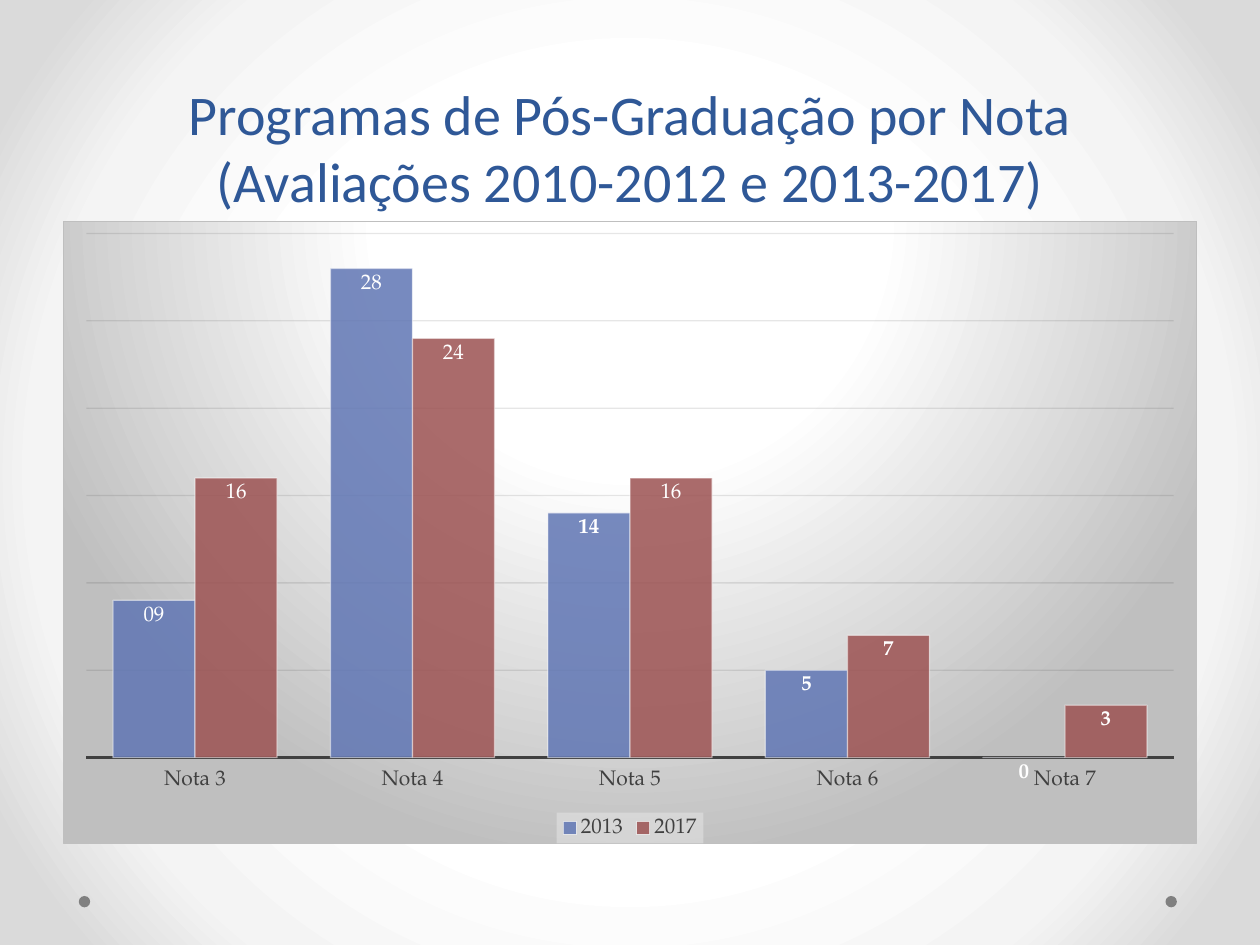
from dataclasses import dataclass

from lxml.etree import fromstring
from pptx import Presentation
from pptx.chart.data import CategoryChartData as Data
from pptx.dml.color import RGBColor as RGB
from pptx.enum.chart import XL_CHART_TYPE as Kind, XL_LABEL_POSITION as Spot
from pptx.enum.chart import XL_LEGEND_POSITION as Side, XL_TICK_LABEL_POSITION as Label
from pptx.enum.chart import XL_TICK_MARK as Tick
from pptx.enum.shapes import MSO_SHAPE as Shape
from pptx.enum.text import MSO_ANCHOR as Anchor, MSO_AUTO_SIZE as Fit, PP_ALIGN as Align
from pptx.util import Pt

DRAW = "http://schemas.openxmlformats.org/drawingml/2006/main"
CHART = "http://schemas.openxmlformats.org/drawingml/2006/chart"


@dataclass(frozen=True)
class Theme:
    title: str = "2F5897"
    text: str = "404040"
    black: str = "000000"
    white: str = "FFFFFF"
    grid: str = "0D0D0D"
    frame: str = "BFBFBF"
    key: str = "F2F2F2"
    dot: str = "808080"
    head: str = "Calibri"
    body: str = "TeX Gyre Pagella"
    big: float = 32
    mid: float = 12
    small: float = 10
    thin: float = 0.75
    thick: float = 1.5


@dataclass(frozen=True)
class Bars:
    name: str
    vals: tuple[int, ...]
    color: str
    plain: tuple[str, ...]


THEME = Theme()
NOTES = [f"Nota {n}" for n in range(3, 8)]
SETS = [
    Bars("2013", (9, 28, 14, 5, 0), "6076B4", ("09", "28")),
    Bars("2017", (16, 24, 16, 7, 3), "9C5252", ("16", "24", "16")),
]


def glow(stops: list[tuple[int, str]], box: tuple[int, int, int, int]) -> str:
    marks = "".join(f'<a:gs pos="{p * 1000}"><a:srgbClr val="{c}"/></a:gs>' for p, c in stops)
    sides = " ".join(f'{s}="{v * 1000}"' for s, v in zip("ltrb", box))
    return (f'<a:gradFill xmlns:a="{DRAW}" rotWithShape="1"><a:gsLst>{marks}</a:gsLst>'
            f'<a:path path="circle"><a:fillToRect {sides}/></a:path></a:gradFill>')


def props(fill: str, line: str = "") -> object:
    return fromstring(f'<c:spPr xmlns:c="{CHART}" xmlns:a="{DRAW}">{fill}{line}</c:spPr>')


def fade(part, alpha: int) -> None:
    for color in part.iter(f"{{{DRAW}}}srgbClr"):
        color.append(fromstring(f'<a:alpha xmlns:a="{DRAW}" val="{alpha * 1000}"/>'))


def style(font, face: str, size: float, color: str, bold: bool = False) -> None:
    font.name, font.size, font.bold = face, Pt(size), bold
    font.color.rgb = RGB.from_string(color)


def stroke(line, color: str, width: float) -> None:
    line.color.rgb = RGB.from_string(color)
    line.width = Pt(width)


def paint_back(slide) -> None:
    fill = slide.background.fill
    fill.solid()
    old = next(slide.element.iter(f"{{{DRAW}}}solidFill"))
    stops = [(50, "FFFFFF"), (76, "F4F4F4"), (92, "DADADA")]
    old.getparent().replace(old, fromstring(glow(stops, (50, 50, 50, 50))))


def add_dot(slide, left: float) -> None:
    dot = slide.shapes.add_shape(Shape.OVAL, Pt(left), Pt(512), Pt(6.5), Pt(6.5))
    dot.shadow.inherit = False
    dot.fill.solid()
    dot.fill.fore_color.rgb = RGB.from_string(THEME.dot)
    dot.line.fill.background()


def set_title(slide) -> None:
    title = slide.shapes.title
    title.left, title.top, title.width, title.height = Pt(36), Pt(24.5), Pt(648), Pt(101.5)
    frame = title.text_frame
    frame.text = "Programas de Pós-Graduação por Nota (Avaliações 2010-2012 e 2013-2017)"
    frame.auto_size, frame.word_wrap = Fit.NONE, True
    frame.vertical_anchor = Anchor.BOTTOM
    line = frame.paragraphs[0]
    line.alignment = Align.CENTER
    style(line.runs[0].font, THEME.head, THEME.big, THEME.title)


def dress(bars, info: Bars) -> None:
    bars.invert_if_negative = False
    fill = bars.format.fill
    fill.solid()
    fill.fore_color.rgb = RGB.from_string(info.color)
    fade(fill._xPr, 85)
    stroke(bars.format.line, THEME.white, THEME.thin)
    fade(bars.format.line._ln, 50)
    tags = bars.data_labels
    tags.show_value, tags.position = True, Spot.INSIDE_END
    style(tags.font, THEME.body, THEME.mid, THEME.white, True)
    for spot, text in enumerate(info.plain):
        tag = bars.points[spot].data_label
        tag.text_frame.text = text
        tag.position = Spot.INSIDE_END
        style(tag.text_frame.paragraphs[0].runs[0].font, THEME.body, THEME.mid, THEME.white)


def set_axes(chart) -> None:
    base, scale = chart.category_axis, chart.value_axis
    base.major_tick_mark = base.minor_tick_mark = Tick.NONE
    base.tick_label_position = Label.LOW
    style(base.tick_labels.font, THEME.body, THEME.mid, THEME.text)
    stroke(base.format.line, THEME.text, THEME.thick)
    scale.minimum_scale, scale.maximum_scale, scale.major_unit = 0, 30, 5
    scale.visible = False
    scale.has_major_gridlines = True
    grid = scale.major_gridlines.format.line
    stroke(grid, THEME.grid, THEME.thin)
    fade(grid._ln, 10)


def set_key(chart) -> None:
    chart.has_legend = True
    key = chart.legend
    key.position, key.include_in_layout = Side.BOTTOM, False
    style(key.font, THEME.body, THEME.mid, THEME.text)
    fill = props(f'<a:solidFill><a:srgbClr val="{THEME.key}"/></a:solidFill>')
    fade(fill, 39)
    key._element.find(f"{{{CHART}}}txPr").addprevious(fill)


def add_bars(slide) -> None:
    data = Data()
    data.categories = NOTES
    for info in SETS:
        data.add_series(info.name, info.vals)
    chart = slide.shapes.add_chart(
        Kind.COLUMN_CLUSTERED, Pt(36), Pt(126), Pt(648), Pt(356.4), data).chart
    chart.has_title = False
    style(chart.font, THEME.body, THEME.small, THEME.black)
    plot = chart.plots[0]
    plot.gap_width, plot.overlap, plot.vary_by_categories = 65, 0, False
    for bars, info in zip(plot.series, SETS):
        dress(bars, info)
    set_axes(chart)
    set_key(chart)
    stops = [(0, THEME.white), (39, THEME.white), (100, THEME.frame)]
    edge = (f'<a:ln w="{Pt(THEME.thin)}"><a:solidFill>'
            f'<a:srgbClr val="{THEME.frame}"/></a:solidFill></a:ln>')
    space = chart._chartSpace
    space.find(f"{{{CHART}}}chart").addnext(props(glow(stops, (50, -80, 50, 180)), edge))


def main() -> None:
    deck = Presentation()
    deck.slide_width, deck.slide_height = Pt(720), Pt(540)
    slide = deck.slides.add_slide(deck.slide_layouts[5])
    paint_back(slide)
    for left in (666, 45):
        add_dot(slide, left)
    set_title(slide)
    add_bars(slide)
    deck.save("out.pptx")


if __name__ == "__main__":
    main()
